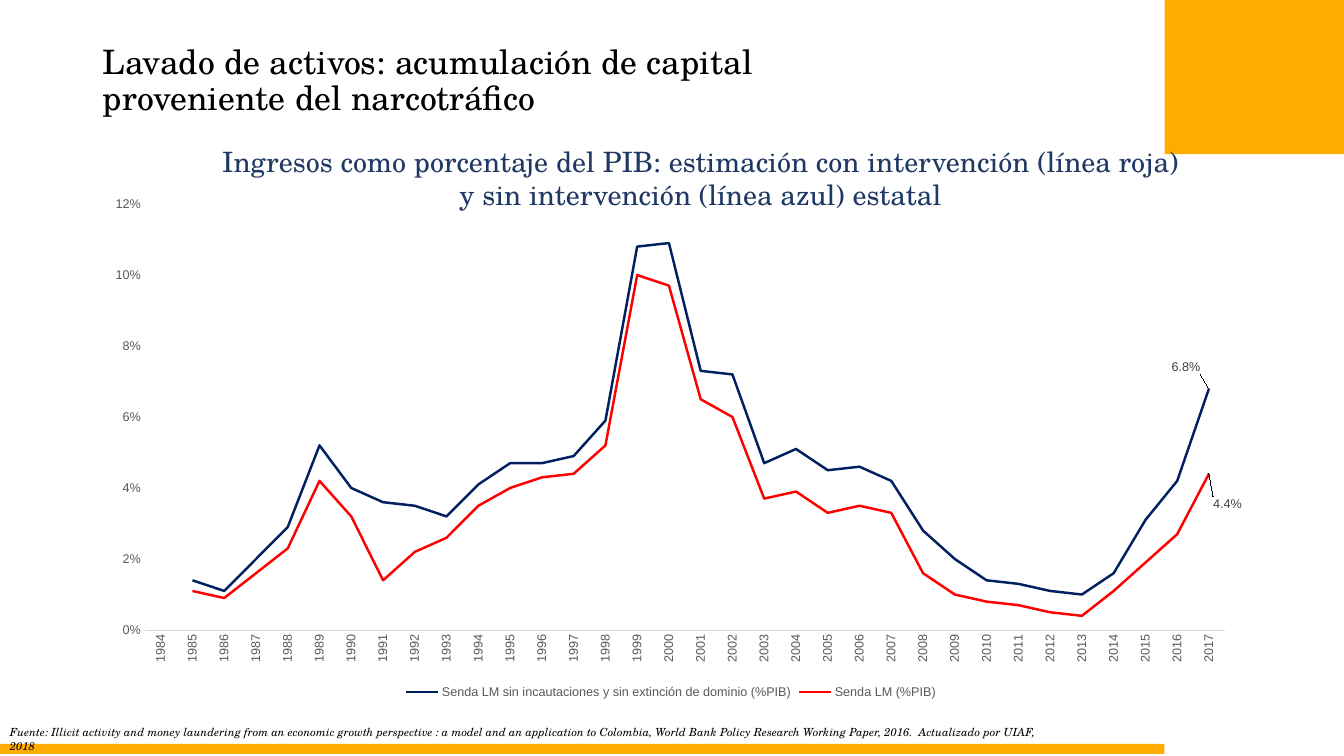
import pptx
import pptx.chart.data
import pptx.dml.color
import pptx.enum.chart
import pptx.enum.shapes
import pptx.enum.text
import pptx.oxml
import pptx.oxml.ns
import pptx.util
from pptx.util import Inches

SERIF = "TeX Gyre Schola"
ALIGN = pptx.enum.text.PP_ALIGN
LABEL = pptx.enum.chart.XL_LABEL_POSITION


def colour(value):
    return pptx.dml.color.RGBColor.from_string(value)


def set_font(font, size, shade, **format_values):
    font.size = pptx.util.Pt(size)
    font.color.rgb = colour(shade)
    for name, value in format_values.items():
        setattr(font, name, value)


deck = pptx.Presentation()
deck.slide_width = Inches(13.33)
deck.slide_height = Inches(7.5)
page = deck.slides.add_slide(deck.slide_layouts[5])

for place in [(0, 7.38, 11.55, 0.1), (11.55, 0, 1.78, 1.53)]:
    block = page.shapes.add_shape(
        pptx.enum.shapes.MSO_SHAPE.RECTANGLE, *map(Inches, place))
    block.shadow.inherit = False
    block.fill.solid()
    block.fill.fore_color.rgb = colour("FFAB00")
    block.line.fill.background()

title = page.shapes.title
title.left, title.top, title.width, title.height = map(Inches, (0.92, 0.4, 8.22, 1.45))
source = page.shapes.add_textbox(*map(Inches, (0, 7.15, 10.65, 0.24)))
heading = page.shapes.add_textbox(*map(Inches, (2.07, 1.38, 9.76, 0.78)))

texts = [
    (title, "Lavado de activos: acumulación de capital proveniente del narcotráfico",
     24, "000000", False, {"alignment": ALIGN.LEFT, "line_spacing": 0.9}),
    (source, "Fuente: Illicit activity and money laundering from an economic growth "
     "perspective : a model and an application to Colombia, World Bank Policy Research "
     "Working Paper, 2016.  Actualizado por UIAF, 2018",
     8, "000000", True, {"alignment": ALIGN.LEFT}),
    (heading, "Ingresos como porcentaje del PIB: estimación con intervención (línea roja) "
     "y sin intervención (línea azul) estatal",
     20, "203864", False, {"alignment": ALIGN.CENTER}),
]
for box, words, size, shade, italic, para_format in texts:
    box.text_frame.word_wrap = True
    box.text_frame.vertical_anchor = pptx.enum.text.MSO_ANCHOR.TOP
    para = box.text_frame.paragraphs[0]
    for name, value in para_format.items():
        setattr(para, name, value)
    span = para.add_run()
    span.text = words
    set_font(span.font, size, shade, name=SERIF, italic=italic)

without_intervention = [
    None, 0.014, 0.011, 0.02, 0.029, 0.052, 0.04, 0.036, 0.035, 0.032, 0.041, 0.047,
    0.047, 0.049, 0.059, 0.108, 0.109, 0.073, 0.072, 0.047, 0.051, 0.045, 0.046, 0.042,
    0.028, 0.02, 0.014, 0.013, 0.011, 0.01, 0.016, 0.031, 0.042, 0.068]
with_intervention = [
    None, 0.011, 0.009, 0.016, 0.023, 0.042, 0.032, 0.014, 0.022, 0.026, 0.035, 0.04,
    0.043, 0.044, 0.052, 0.1, 0.097, 0.065, 0.06, 0.037, 0.039, 0.033, 0.035, 0.033,
    0.016, 0.01, 0.008, 0.007, 0.005, 0.004, 0.011, 0.019, 0.027, 0.044]

income = pptx.chart.data.CategoryChartData(number_format="0.0%")
income.categories = [str(year) for year in range(1984, 2018)]
income.add_series("Senda LM sin incautaciones y sin extinción de dominio (%PIB)",
                  without_intervention)
income.add_series("Senda LM (%PIB)", with_intervention)
chart = page.shapes.add_chart(
    pptx.enum.chart.XL_CHART_TYPE.LINE,
    *map(Inches, (0.92, 1.85, 11.47, 5.13)), income).chart
chart.has_title = False
set_font(chart.font, 10, "000000", name="Arial")
chart.plots[0].vary_by_categories = False
chart.has_legend = True
chart.legend.position = pptx.enum.chart.XL_LEGEND_POSITION.BOTTOM
chart.legend.include_in_layout = False
set_font(chart.legend.font, 9, "595959", name="Arial")

for axis in (chart.category_axis, chart.value_axis):
    axis.has_major_gridlines = False
    axis.major_tick_mark = pptx.enum.chart.XL_TICK_MARK.NONE
    axis.minor_tick_mark = pptx.enum.chart.XL_TICK_MARK.NONE
    set_font(axis.tick_labels.font, 9, "595959", name="Arial")
years, percent = chart.category_axis, chart.value_axis
years.format.line.color.rgb = colour("D9D9D9")
years.format.line.width = pptx.util.Pt(0.75)
years_body = years._element.find(".//" + pptx.oxml.ns.qn("a:bodyPr"))
years_body.set("rot", "-5400000")
years_body.set("vert", "horz")
percent.minimum_scale, percent.maximum_scale, percent.major_unit = 0, 0.12, 0.02
percent.tick_labels.number_format = "0%"
percent.tick_labels.number_format_is_linked = False
percent.format.line.fill.background()

layout_xml = '<c:layout %s><c:manualLayout>%s</c:manualLayout></c:layout>'
namespace = pptx.oxml.ns.nsdecls("c")
plot_area = chart._chartSpace.chart.plotArea
for old_layout in plot_area.findall(pptx.oxml.ns.qn("c:layout")):
    plot_area.remove(old_layout)
plot_place = (
    '<c:layoutTarget val="inner"/><c:xMode val="edge"/><c:yMode val="edge"/>'
    '<c:x val="0.045"/><c:y val="0.034"/><c:w val="0.934"/><c:h val="0.824"/>')
plot_area.insert(0, pptx.oxml.parse_xml(layout_xml % (namespace, plot_place)))

line_styles = [("002060", LABEL.ABOVE, -0.02, -0.02), ("FF0000", LABEL.BELOW, 0.016, 0.037)]
for series, (shade, position, shift_x, shift_y) in zip(chart.plots[0].series, line_styles):
    series.smooth = False
    series.marker.style = pptx.enum.chart.XL_MARKER_STYLE.NONE
    series.format.line.color.rgb = colour(shade)
    series.format.line.width = pptx.util.Pt(1.75)
    series.data_labels.show_value = False
    last_label = series.points[33].data_label
    set_font(last_label.font, 9, "404040", name="Arial")
    last_label.position = position
    label_place = f'<c:x val="{shift_x}"/><c:y val="{shift_y}"/>'
    label_xml = series._element.find(".//" + pptx.oxml.ns.qn("c:dLbl"))
    label_xml.insert(1, pptx.oxml.parse_xml(layout_xml % (namespace, label_place)))

deck.save("out.pptx")
